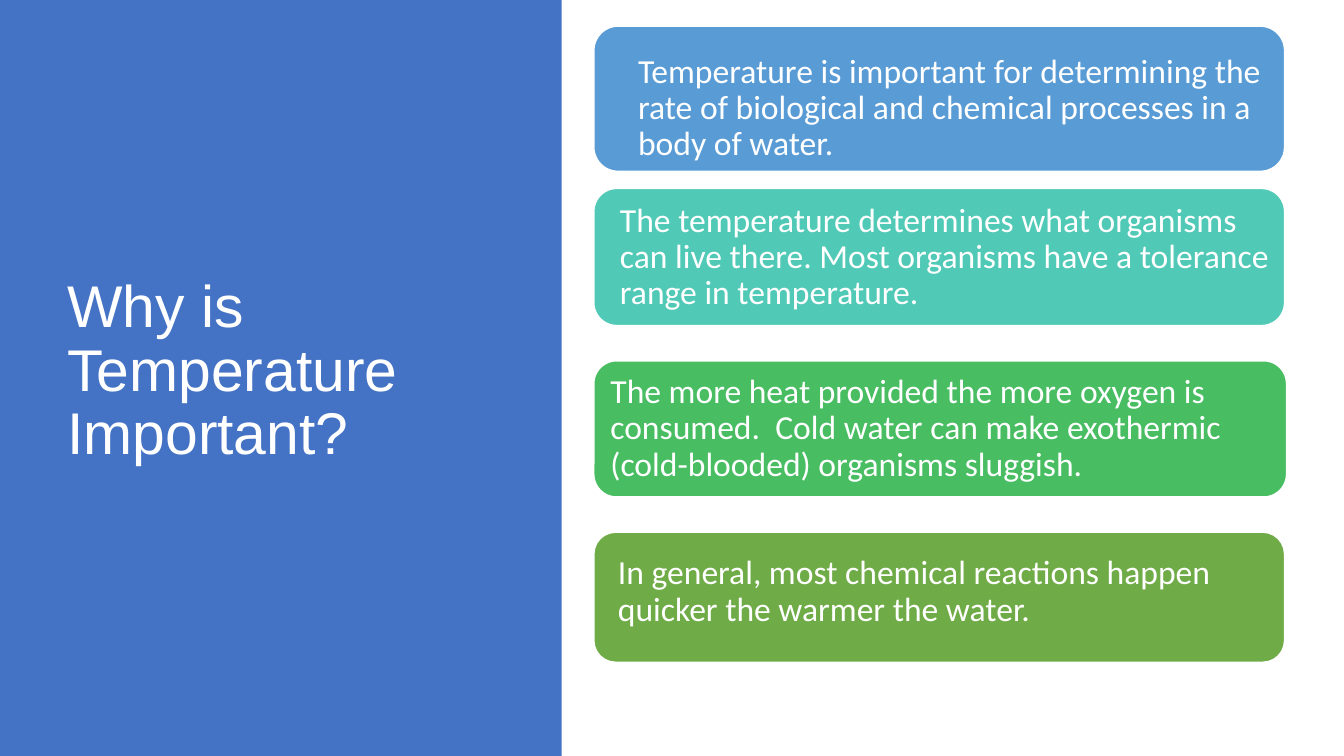
import pptx
import pptx.util
import pptx.dml.color
import pptx.enum.shapes
import pptx.enum.text

PX = 9144  # EMU in one px, 100 px to the inch
KIND = pptx.enum.shapes.MSO_SHAPE
HUES = {"panel": "4472C4", "blue": "599BD5", "teal": "50C9B6",
        "green": "48BD62", "olive": "6FAB46", "white": "FFFFFF"}


def draw(kind, box, hue):
    """Add a filled shape with no shadow and no outline."""
    shape = deck.shapes.add_shape(kind, *[n * PX for n in box])
    shape.shadow.inherit = False
    shape.fill.solid()
    shape.fill.fore_color.rgb = pptx.dml.color.RGBColor.from_string(HUES[hue])
    shape.line.fill.background()
    return shape


def write(shape, words, face, size, edge):
    """Put white, left-aligned, middle-anchored text in a shape."""
    frame = shape.text_frame
    look = {"word_wrap": True,
            "vertical_anchor": pptx.enum.text.MSO_ANCHOR.MIDDLE,
            "margin_left": 10 * PX, "margin_right": 10 * PX,
            "margin_top": edge * PX, "margin_bottom": edge * PX}
    for name, value in look.items():
        setattr(frame, name, value)
    para = frame.paragraphs[0]
    para.alignment = pptx.enum.text.PP_ALIGN.LEFT
    para.line_spacing = 0.9
    run = para.add_run()
    run.text = words
    for name, value in {"name": face, "size": pptx.util.Pt(size)}.items():
        setattr(run.font, name, value)
    run.font.color.rgb = pptx.dml.color.RGBColor.from_string(HUES["white"])


show = pptx.Presentation()
show.slide_width, show.slide_height = 1333 * PX, 750 * PX
deck = show.slides.add_slide(show.slide_layouts[6])

# Title panel
draw(KIND.RECTANGLE, (0, 0, 557, 750), "panel")
title = deck.shapes.add_textbox(57 * PX, 68 * PX, 416 * PX, 602 * PX)
write(title, "Why is Temperature Important?", "Arial", 42, 5)

# Reason cards: hue, top, width, height, text box (None: text in the card), words
cards = [
    ("blue", 26, 685, 144, (623, 28, 644, 159),
     "Temperature is important for determining the rate of biological "
     "and chemical processes in a body of water."),
    ("teal", 187, 685, 136, (605, 194, 671, 123),
     "The temperature determines what organisms can live there. "
     "Most organisms have a tolerance range in temperature."),
    ("green", 358, 687, 135, None,
     "The more heat provided the more oxygen is consumed.  Cold water "
     "can make exothermic (cold-blooded) organisms sluggish."),
    ("olive", 528, 685, 129, (603, 518, 671, 139),
     "In general, most chemical reactions happen quicker the warmer the water."),
]
for hue, top, wide, high, box, words in cards:
    card = draw(KIND.ROUNDED_RECTANGLE, (589, top, wide, high), hue)
    card.line.color.rgb = pptx.dml.color.RGBColor.from_string(HUES["white"])
    card.line.width = pptx.util.Pt(1)
    if box:
        card = deck.shapes.add_textbox(*[n * PX for n in box])
    write(card, words, "Calibri", 24, 10)

show.save("out.pptx")
